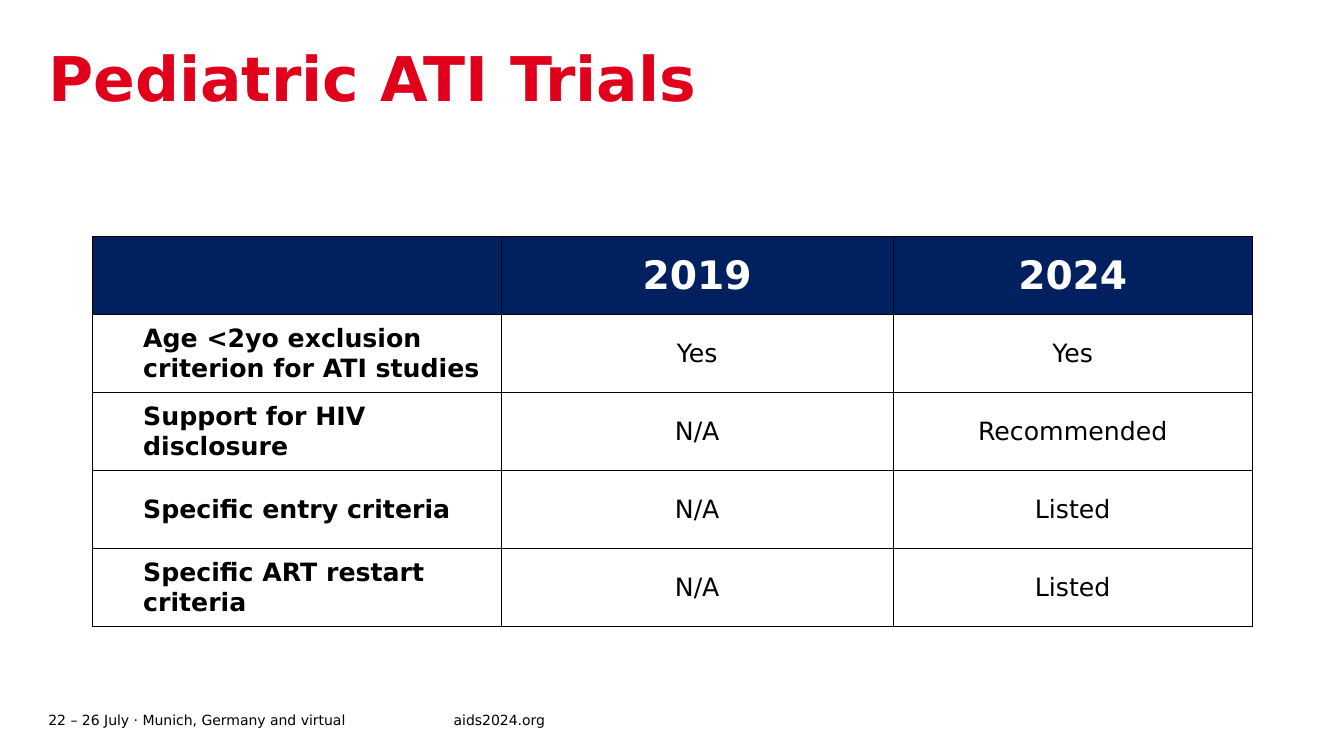
"""Builds the slide comparing pediatric ATI trial guidance in 2019 and 2024."""
from lxml import etree
from pptx import Presentation
from pptx import util as u
from pptx.dml.color import RGBColor
from pptx.enum import text
from pptx.oxml import ns

COLOURS = {"title": "E0001B", "header": "002060", "body": "000000",
           "white": "FFFFFF", "border": "000000"}
FONT = "DejaVu Sans"
ROWS = [
    ("", "2019", "2024"),
    ("Age <2yo exclusion criterion for ATI studies", "Yes", "Yes"),
    ("Support for HIV disclosure", "N/A", "Recommended"),
    ("Specific entry criteria", "N/A", "Listed"),
    ("Specific ART restart criteria", "N/A", "Listed"),
]
COLUMN_WIDTHS = (4.05, 3.89, 3.56)
ROW_HEIGHT = 0.774
FOOTERS = [
    ("22 – 26 July · Munich, Germany and virtual", 0.48, 4.02),
    ("aids2024.org", 4.5, 1.93),
]


def apply(target, values):
    for name, value in values.items():
        setattr(target, name, value)


def write(frame, words, size, colour, bold=False, **paragraph_format):
    para = frame.paragraphs[0]
    apply(para, paragraph_format)
    span = para.add_run()
    span.text = words
    apply(span.font, {"name": FONT, "size": u.Pt(size), "bold": bold})
    span.font.color.rgb = RGBColor.from_string(COLOURS[colour])


def clear_margins(frame, anchor):
    apply(frame, {"margin_left": 0, "margin_right": 0, "margin_top": 0,
                  "margin_bottom": 0, "word_wrap": True,
                  "auto_size": text.MSO_AUTO_SIZE.NONE,
                  "vertical_anchor": anchor})


def add_title(page, words):
    title = page.shapes.title
    apply(title, {"left": u.Inches(0.48), "top": u.Inches(0.48),
                  "width": u.Inches(9.72), "height": u.Inches(1.34)})
    clear_margins(title.text_frame, text.MSO_ANCHOR.TOP)
    write(title.text_frame, words, 44, "title", True,
          alignment=text.PP_ALIGN.LEFT, line_spacing=0.9)


def add_footer(page, words, left, width):
    box = page.shapes.add_textbox(u.Inches(left), u.Inches(7.02),
                                  u.Inches(width), u.Inches(0.24))
    clear_margins(box.text_frame, text.MSO_ANCHOR.MIDDLE)
    write(box.text_frame, words, 10, "body")


def add_borders(cell):
    properties = cell._tc.get_or_add_tcPr()
    for position, side in enumerate(("lnL", "lnR", "lnT", "lnB")):
        line = etree.Element(ns.qn(f"a:{side}"), w=str(u.Pt(1)))
        fill = etree.SubElement(line, ns.qn("a:solidFill"))
        etree.SubElement(fill, ns.qn("a:srgbClr"), val=COLOURS["border"])
        properties.insert(position, line)


def format_cell(cell, words, is_header, is_label):
    cell.vertical_anchor = text.MSO_ANCHOR.MIDDLE
    if is_header:
        cell.fill.solid()
        cell.fill.fore_color.rgb = RGBColor.from_string(COLOURS["header"])
    else:
        cell.fill.background()
    if is_label and not is_header:
        cell.margin_left = u.Inches(0.5)
    if words:
        write(cell.text_frame, words, 28 if is_header else 18,
              "white" if is_header else "body", is_header or is_label,
              alignment=text.PP_ALIGN.LEFT if is_label else text.PP_ALIGN.CENTER)
    add_borders(cell)


def add_comparison(page):
    frame = page.shapes.add_table(
        len(ROWS), len(COLUMN_WIDTHS), u.Inches(0.92), u.Inches(2.35),
        u.Inches(sum(COLUMN_WIDTHS)), u.Inches(ROW_HEIGHT * len(ROWS)))
    table = frame.table
    table.horz_banding = False
    for column, width in zip(table.columns, COLUMN_WIDTHS):
        column.width = u.Inches(width)
    for row_index, row in enumerate(ROWS):
        table.rows[row_index].height = u.Inches(ROW_HEIGHT)
        for column_index, words in enumerate(row):
            format_cell(table.cell(row_index, column_index), words,
                        row_index == 0, column_index == 0)


def main():
    deck = Presentation()
    apply(deck, {"slide_width": u.Inches(13.33), "slide_height": u.Inches(7.5)})
    page = deck.slides.add_slide(deck.slide_layouts.get_by_name("Title Only"))
    add_title(page, "Pediatric ATI Trials")
    add_comparison(page)
    for footer in FOOTERS:
        add_footer(page, *footer)
    deck.save("out.pptx")


if __name__ == "__main__":
    main()
